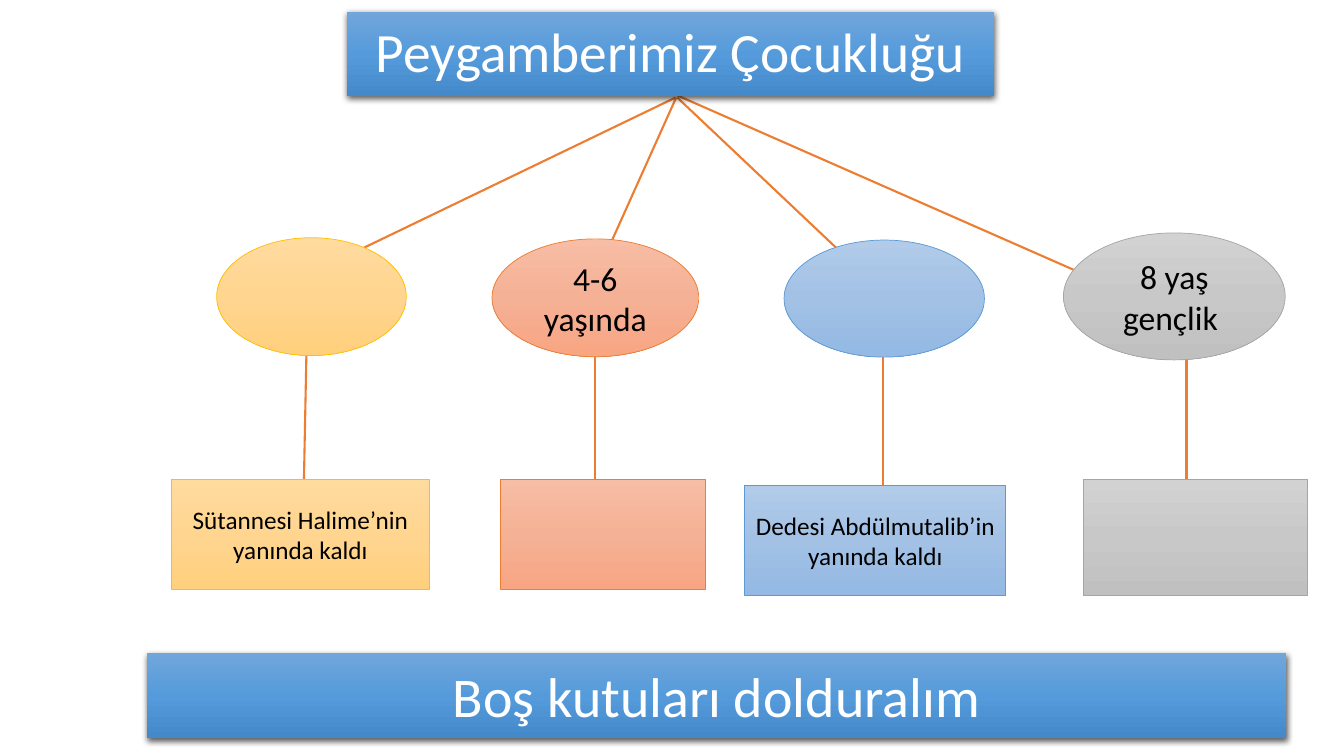
import copy

import pptx
import pptx.dml.color
import pptx.enum.shapes
import pptx.enum.text
import pptx.oxml
import pptx.oxml.ns
import pptx.util

Cm, Pt = pptx.util.Cm, pptx.util.Pt
SHAPES = pptx.enum.shapes.MSO_SHAPE
NAMESPACE = pptx.oxml.ns.nsdecls("a")

COLORS = {"black": "000000", "white": "FFFFFF", "link": "ED7D31"}
GRADIENTS = {
    "banner": ("71A6DB", "559BDB", "448ACA"),
    "gold": ("FFDB9E", "FFD590", "FFD07C"),
    "orange": ("F7BDA5", "F5B196", "F8A582"),
    "blue": ("B1CBE9", "A3C1E5", "93B9E4"),
    "gray": ("D2D2D2", "C8C8C8", "C0C0C0"),
}
OUTLINES = {"gold": "FFC000", "orange": "ED7D31", "blue": "5B9BD5", "gray": "A5A5A5"}

# All lengths are in centimetres: left, top, width, height
BANNERS = [
    ("Peygamberimiz Çocukluğu", (8.74, 0.3, 16.31, 2.13), 39.6, 0.9),
    ("Boş kutuları dolduralım", (3.71, 16.46, 28.7, 2.13), 40, 1),
]
# Each stage of life: the age in an ellipse, the event in a box, and the links
# (start x, start y, end x, end y) from the title and down to the box
STAGES = [
    {"theme": "gold",
     "age": ("", (5.46, 5.99, 4.78, 2.97)),
     "event": ("Sütannesi Halime’nin yanında kaldı", (4.32, 12.09, 6.5, 2.77)),
     "links": [(17.02, 2.46, 8.74, 6.45), (7.75, 7.47, 7.62, 14.1)]},
    {"theme": "orange",
     "age": ("4-6 yaşında", (12.4, 6.02, 5.21, 2.97)),
     "event": ("", (12.62, 12.09, 5.16, 2.77)),
     "links": [(17.04, 2.46, 15.04, 6.91), (14.99, 8.51, 14.99, 14.1)]},
    {"theme": "blue",
     "age": ("", (19.76, 6.05, 5.05, 2.95)),
     "event": ("Dedesi Abdülmutalib’in\nyanında kaldı", (18.77, 12.24, 6.58, 2.77)),
     "links": [(17.07, 2.46, 21.29, 6.45), (22.25, 8.23, 22.25, 13.82)]},
    {"theme": "gray",
     "age": ("8 yaş gençlik ", (26.8, 5.87, 5.59, 3.2)),
     "event": ("", (27.31, 12.09, 5.64, 2.92)),
     "links": [(16.81, 2.29, 27.31, 6.91), (29.9, 8.23, 29.9, 13.82)]},
]


def rgb(value):
    return pptx.dml.color.RGBColor.from_string(value)


def fill_gradient(shape, colors):
    """Fill from top to bottom with evenly spaced colour stops."""
    shape.fill.gradient()
    shape.fill.gradient_angle = 270
    first_stop = shape.fill.gradient_stops[0]
    stop_list = shape._element.spPr.find(".//" + pptx.oxml.ns.qn("a:gsLst"))
    first_stop.color.rgb = rgb(colors[0])
    stop_list.insert(1, copy.deepcopy(stop_list[0]))
    for index, stop in enumerate(shape.fill.gradient_stops):
        stop.position = index / (len(colors) - 1)
        stop.color.rgb = rgb(colors[index])


def add_box(slide, kind, text, area, theme, size, color, spacing=1):
    box = slide.shapes.add_shape(kind, *map(Cm, area))
    box.shadow.inherit = False
    fill_gradient(box, GRADIENTS[theme])
    if theme in OUTLINES:
        box.line.color.rgb = rgb(OUTLINES[theme])
        box.line.width = Pt(0.5)
    else:
        box.line.fill.background()
    frame = box.text_frame
    frame.word_wrap = True
    frame.vertical_anchor = pptx.enum.text.MSO_ANCHOR.MIDDLE
    for index, line in enumerate(text.split("\n") if text else []):
        para = frame.add_paragraph() if index else frame.paragraphs[0]
        para.alignment = pptx.enum.text.PP_ALIGN.CENTER
        para.line_spacing = spacing
        span = para.add_run()
        span.text = line
        span.font.name = "Calibri"
        span.font.size = Pt(size)
        span.font.color.rgb = rgb(COLORS[color])
    return box


def add_drop_shadow(box):
    effects = box._element.spPr.find(pptx.oxml.ns.qn("a:effectLst"))
    effects.append(pptx.oxml.parse_xml(
        f'<a:outerShdw {NAMESPACE} blurRad="{Pt(4.5)}" dist="{Pt(1.5)}" dir="5400000" '
        f'algn="ctr" rotWithShape="0"><a:srgbClr val="{COLORS["black"]}">'
        '<a:alpha val="63000"/></a:srgbClr></a:outerShdw>'))


def add_arrow(slide, ends):
    arrow = slide.shapes.add_connector(
        pptx.enum.shapes.MSO_CONNECTOR.STRAIGHT, *map(Cm, ends))
    arrow.line.color.rgb = rgb(COLORS["link"])
    arrow.line.width = Pt(1.5)
    arrow.line._get_or_add_ln().append(
        pptx.oxml.parse_xml(f'<a:tailEnd {NAMESPACE} type="triangle"/>'))
    arrow._element.spPr.append(pptx.oxml.parse_xml(f"<a:effectLst {NAMESPACE}/>"))


def main():
    deck = pptx.Presentation()
    deck.slide_width, deck.slide_height = Cm(33.87), Cm(19.05)
    slide = deck.slides.add_slide(deck.slide_layouts[6])

    # Arrows go first so that the boxes cover their ends
    for stage in STAGES:
        for ends in stage["links"]:
            add_arrow(slide, ends)
    for stage in STAGES:
        add_box(slide, SHAPES.OVAL, *stage["age"], stage["theme"], 24, "black")
        add_box(slide, SHAPES.RECTANGLE, *stage["event"], stage["theme"], 18, "black")
    for text, area, size, spacing in BANNERS:
        banner = add_box(slide, SHAPES.RECTANGLE, text, area, "banner", size, "white", spacing)
        add_drop_shadow(banner)

    deck.save("out.pptx")


if __name__ == "__main__":
    main()
